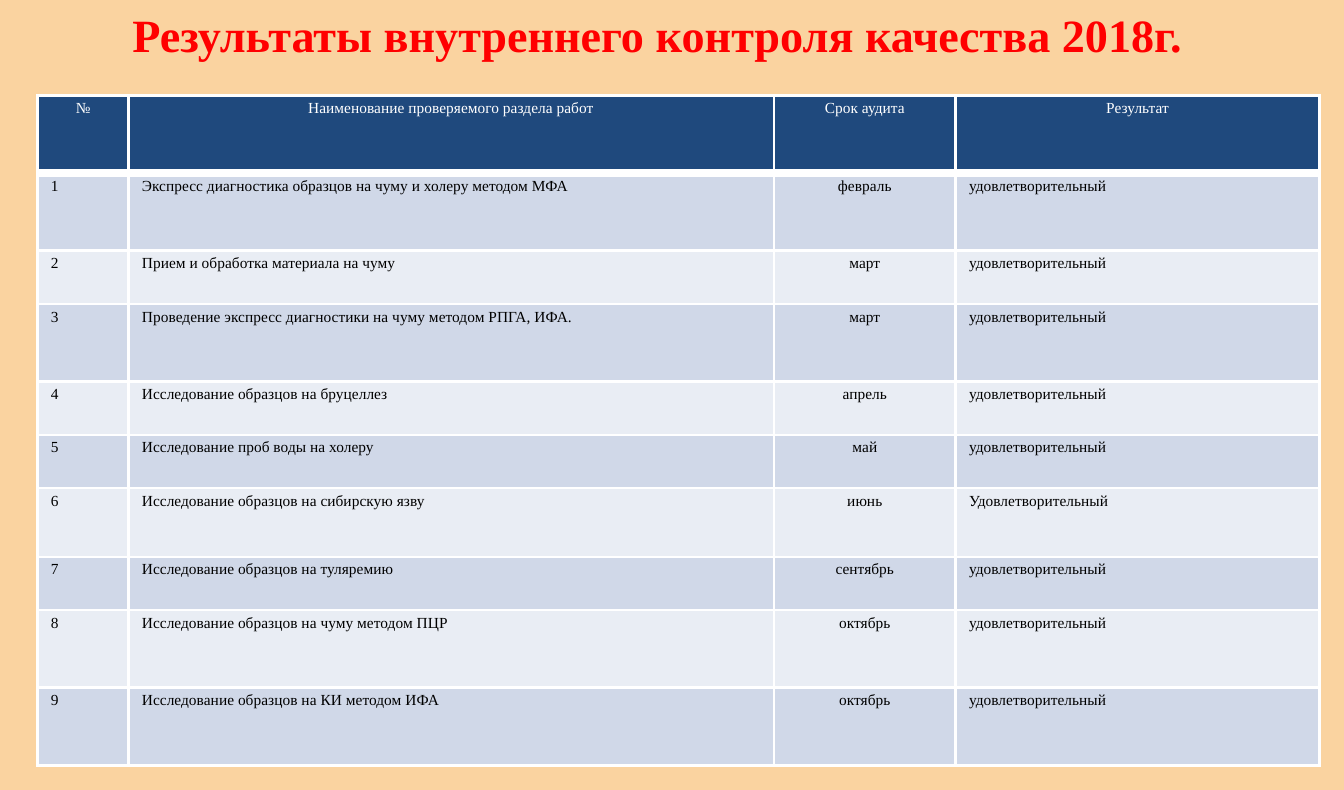
import pptx
import pptx.util
import pptx.dml.color
import pptx.enum.text
import pptx.oxml

Inches = pptx.util.Inches
Pt = pptx.util.Pt
ALIGN = pptx.enum.text.PP_ALIGN

FONT = "Times New Roman"
WHITE = "FFFFFF"
NAVY = "1F497D"
BANDS = ["D0D8E8", "E9EDF4"]
COL_WIDTHS = [0.41, 2.91, 0.82, 1.64]
ROW_HEIGHTS = [0.35, 0.35, 0.24, 0.35, 0.24, 0.24, 0.31, 0.24, 0.35, 0.35]
HEADER = ["№", "Наименование проверяемого раздела работ", "Срок аудита", "Результат"]
AUDITS = [
    ("Экспресс диагностика образцов на чуму и холеру методом МФА", "февраль", "удовлетворительный"),
    ("Прием и обработка материала на чуму", "март", "удовлетворительный"),
    ("Проведение экспресс диагностики на чуму методом РПГА, ИФА.", "март", "удовлетворительный"),
    ("Исследование образцов на бруцеллез", "апрель", "удовлетворительный"),
    ("Исследование проб воды на холеру", "май", "удовлетворительный"),
    ("Исследование образцов на сибирскую язву", "июнь", "Удовлетворительный"),
    ("Исследование образцов на туляремию", "сентябрь", "удовлетворительный"),
    ("Исследование образцов на чуму методом ПЦР", "октябрь", "удовлетворительный"),
    ("Исследование образцов на КИ методом ИФА", "октябрь", "удовлетворительный"),
]


def rgb(color):
    return pptx.dml.color.RGBColor.from_string(color)


def write(tf, text, size=5, color="000000", bold=False, align=ALIGN.LEFT, before=0):
    p = tf.paragraphs[0]
    p.alignment = align
    p.space_before = Pt(before)
    r = p.add_run()
    r.text = text
    r.font.name = FONT
    r.font.size = Pt(size)
    r.font.bold = bold
    r.font.color.rgb = rgb(color)


def set_margins(target, side, top):
    target.margin_left = target.margin_right = Inches(side)
    target.margin_top = target.margin_bottom = Inches(top)


def set_borders(cell, bottom=1):
    tc_pr = cell._tc.get_or_add_tcPr()
    widths = {"L": 1, "R": 1, "T": 1, "B": bottom}
    for i, (side, width) in enumerate(widths.items()):
        ln = pptx.oxml.parse_xml(
            f'<a:ln{side} xmlns:a="http://schemas.openxmlformats.org/drawingml/2006/main" '
            f'w="{Pt(width)}"><a:solidFill><a:srgbClr val="{WHITE}"/></a:solidFill></a:ln{side}>')
        tc_pr.insert(i, ln)


def add_title(s, text):
    sp = s.shapes.add_textbox(Inches(0.17), Inches(0), Inches(5.59), Inches(0.43))
    tf = sp.text_frame
    tf.word_wrap = True
    set_margins(tf, 0.06, 0.03)
    write(tf, text, size=15, color="FF0000", bold=True, align=ALIGN.CENTER, before=1.5)


def add_audit_table(s, rows):
    frame = s.shapes.add_table(len(rows), len(HEADER), Inches(0.17), Inches(0.43),
                               Inches(sum(COL_WIDTHS)), Inches(sum(ROW_HEIGHTS)))
    table = frame.table
    for column, width in zip(table.columns, COL_WIDTHS):
        column.width = Inches(width)
    for i, (row, height) in enumerate(zip(rows, ROW_HEIGHTS)):
        table.rows[i].height = Inches(height)
        header = i == 0
        for j, text in enumerate(row):
            cell = table.cell(i, j)
            set_margins(cell, 0.06, 0.02)
            cell.fill.solid()
            cell.fill.fore_color.rgb = rgb(NAVY if header else BANDS[(i - 1) % 2])
            set_borders(cell, bottom=3 if header else 1)
            write(cell.text_frame, text, color=WHITE if header else "000000",
                  align=ALIGN.CENTER if header or j == 2 else ALIGN.LEFT)


def main():
    prs = pptx.Presentation()
    prs.slide_width = Inches(6.06)
    prs.slide_height = Inches(3.56)
    s = prs.slides.add_slide(prs.slide_layouts[6])
    s.background.fill.solid()
    s.background.fill.fore_color.rgb = rgb("FAD3A0")
    add_title(s, "Результаты внутреннего контроля качества 2018г.")
    add_audit_table(s, [HEADER] + [(str(n), *audit) for n, audit in enumerate(AUDITS, 1)])
    prs.save("out.pptx")


if __name__ == "__main__":
    main()
